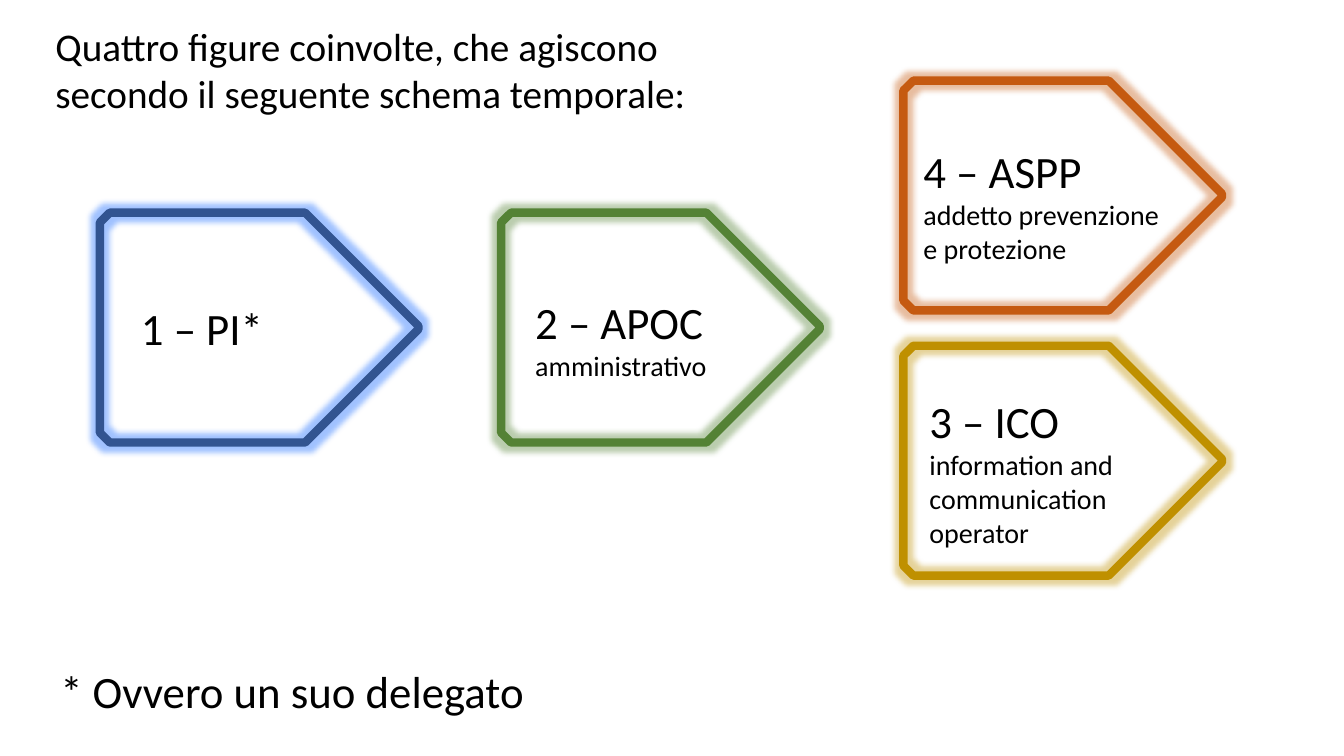
from lxml import etree
from pptx import Presentation
from pptx.dml.color import RGBColor
from pptx.enum.shapes import MSO_SHAPE
from pptx.enum.text import MSO_ANCHOR, MSO_AUTO_SIZE, PP_ALIGN
from pptx.oxml.ns import qn
from pptx.util import Inches, Pt

SNIPPED = MSO_SHAPE.SNIP_2_SAME_RECTANGLE
TOP = MSO_ANCHOR.TOP
LEFT = PP_ALIGN.LEFT
NO_AUTOFIT = MSO_AUTO_SIZE.NONE
GROW = MSO_AUTO_SIZE.SHAPE_TO_FIT_TEXT

BLACK = RGBColor(0x00, 0x00, 0x00)
BLUE = RGBColor(0x32, 0x54, 0x91)
BRIGHT_BLUE = RGBColor(0x12, 0x66, 0xFF)
GREEN = RGBColor(0x54, 0x82, 0x35)
ORANGE = RGBColor(0xC5, 0x5A, 0x11)
GOLD = RGBColor(0xBF, 0x90, 0x00)

# Arrow left and top, line colour, glow colour
ARROWS = [
    (1.43, 1.67, BLUE, BRIGHT_BLUE),
    (5.41, 1.67, GREEN, GREEN),
    (9.4, 0.36, ORANGE, ORANGE),
    (9.4, 2.99, GOLD, GOLD),
]
# Text box, role, explanation
LABELS = [
    ((1.3, 2.93, 2.07, 0.64), "1 – PI*", ""),
    ((5.21, 2.87, 1.98, 0.98), "2 – APOC ", "amministrativo"),
    ((9.06, 1.38, 2.65, 1.31), "4 – ASPP ", "addetto prevenzione e protezione"),
    ((9.12, 3.86, 2.43, 1.65), "3 – ICO ", "information and communication operator"),
    ((0.5, 6.54, 5.83, 0.64), "* Ovvero un suo delegato", ""),
]


class Deck:
    font = "Calibri"
    title_size = 28
    role_size = 32
    detail_size = 20

    def __init__(self):
        self.prs = Presentation()
        self.prs.slide_width = Inches(13.33)
        self.prs.slide_height = Inches(7.5)
        self.slide = self.prs.slides.add_slide(self.prs.slide_layouts[5])

    def style_run(self, r, size):
        r.font.name = self.font
        r.font.size = Pt(size)
        r.font.color.rgb = BLACK

    def title(self, box, text):
        sp = self.slide.shapes.title
        sp.left, sp.top, sp.width, sp.height = map(Inches, box)
        tf = sp.text_frame
        tf.text = text
        tf.word_wrap = True
        tf.auto_size = NO_AUTOFIT
        tf.vertical_anchor = TOP
        p = tf.paragraphs[0]
        p.alignment = LEFT
        self.style_run(p.runs[0], self.title_size)

    def arrow(self, left, top, color, glow_color):
        sp = self.slide.shapes.add_shape(
            SNIPPED, Inches(left), Inches(top), Inches(2.28), Inches(3.16))
        sp.rotation = 90
        sp.adjustments[0] = 0.493
        sp.adjustments[1] = 0.043
        sp.fill.background()
        sp.line.color.rgb = color
        sp.line.width = Pt(6)
        sp.shadow.inherit = False
        self.glow(sp, glow_color)

    def glow(self, sp, color):
        effects = sp._element.spPr.find(qn("a:effectLst"))
        glow = etree.SubElement(effects, qn("a:glow"), rad=str(Pt(8)))
        clr = etree.SubElement(glow, qn("a:srgbClr"), val=str(color))
        etree.SubElement(clr, qn("a:alpha"), val="40000")

    def label(self, box, role, detail):
        sp = self.slide.shapes.add_textbox(*map(Inches, box))
        tf = sp.text_frame
        tf.word_wrap = True
        tf.auto_size = GROW
        p = tf.paragraphs[0]
        for text, size in ((role, self.role_size), (detail, self.detail_size)):
            if text:
                r = p.add_run()
                r.text = text
                self.style_run(r, size)


def main():
    deck = Deck()
    deck.title((0.45, 0.17, 6.66, 1.04),
               "Quattro figure coinvolte, che agiscono secondo il seguente schema temporale:")
    for arrow in ARROWS:
        deck.arrow(*arrow)
    for label in LABELS:
        deck.label(*label)
    deck.prs.save("out.pptx")


if __name__ == "__main__":
    main()
